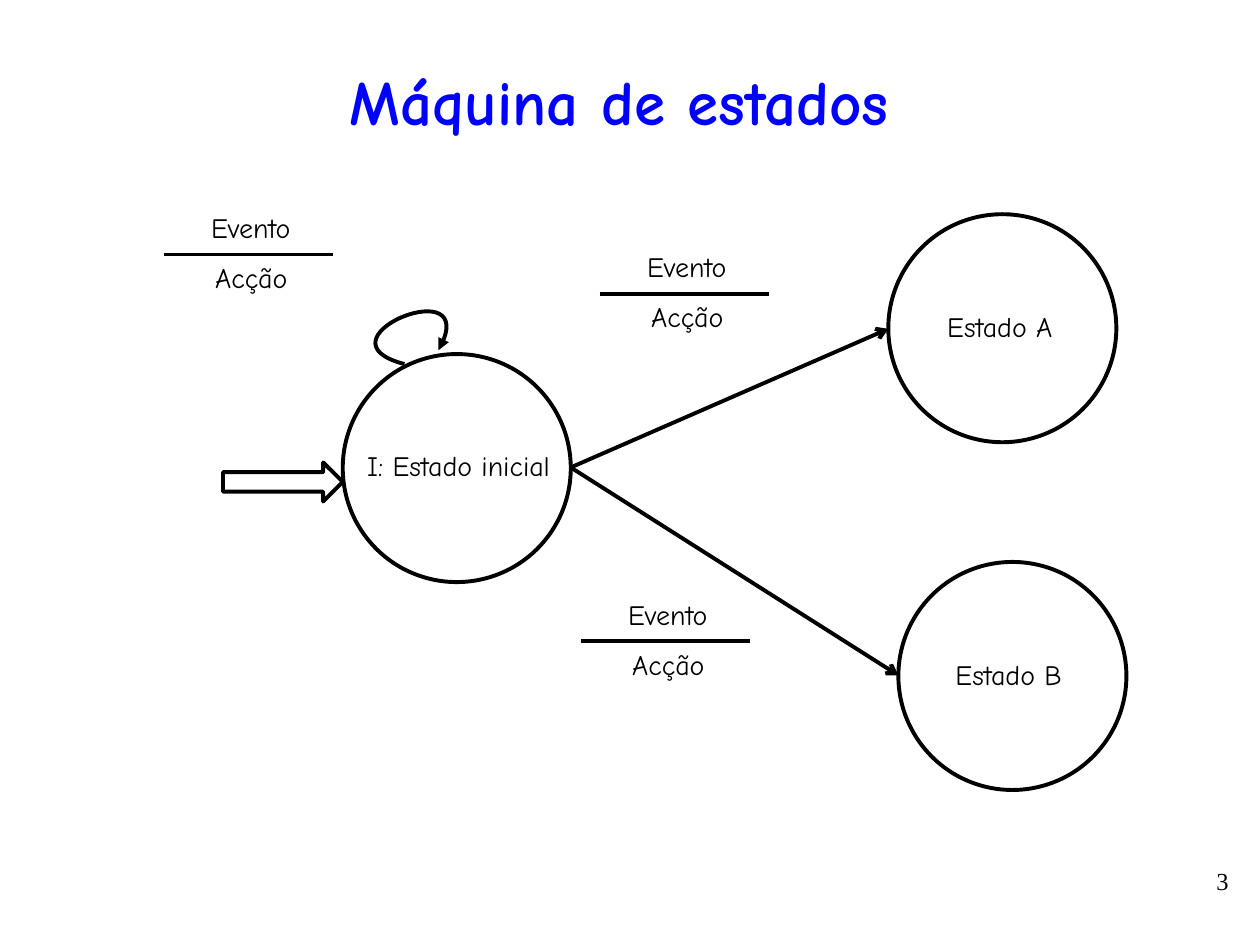
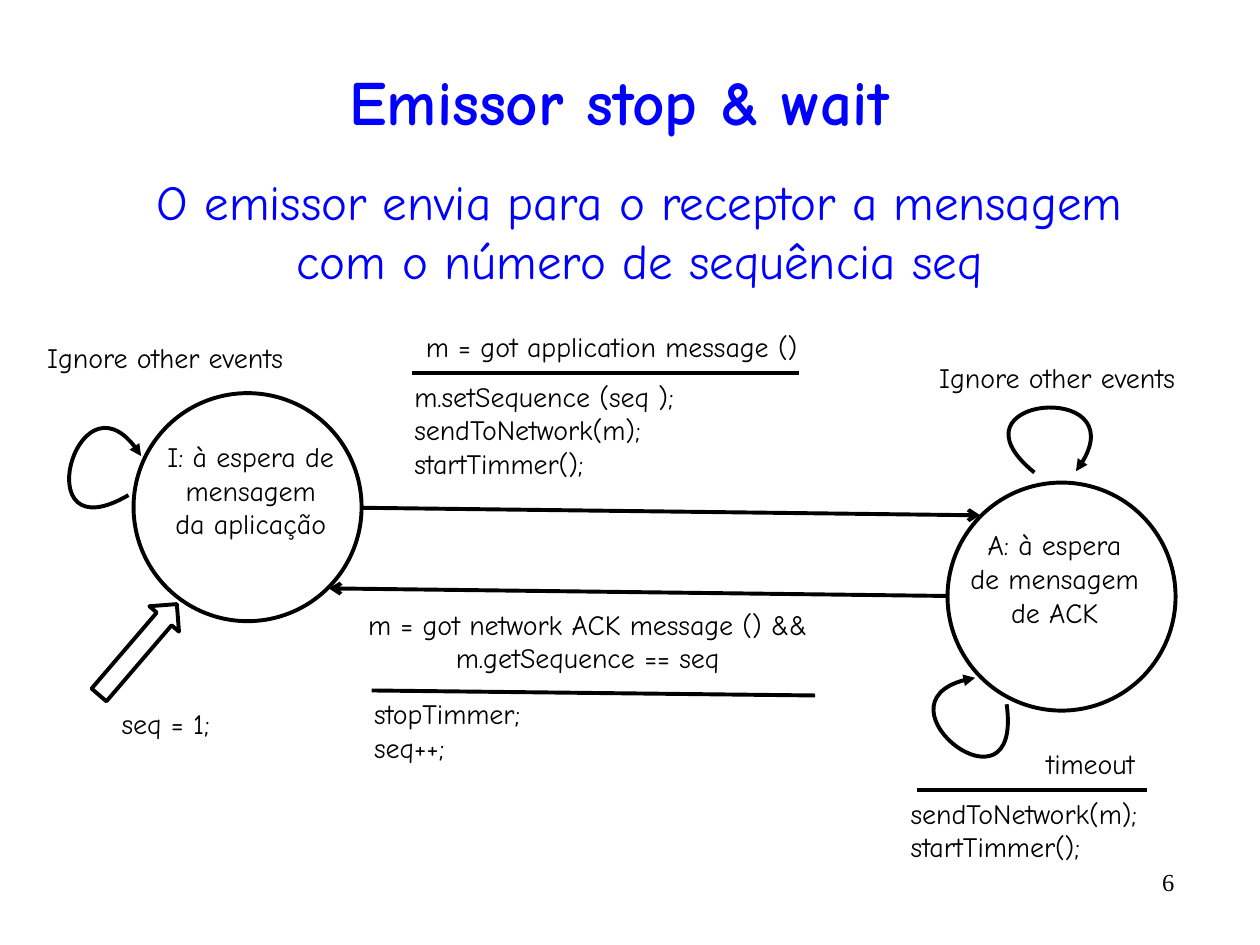
from lxml import etree
from pptx import Presentation
from pptx import util as u
from pptx.dml.color import RGBColor
from pptx.enum import shapes as es, text as et
from pptx.oxml.ns import qn

PX = 9144
COLORS = {"ink": "000000", "heading": "0000FF"}
FONTS = {"main": "Comic Neue", "number": "Times New Roman"}
LABEL = {"size": u.Pt(16), "name": FONTS["main"], "bold": False}
TITLE = {"size": u.Pt(36), "name": FONTS["main"], "bold": True}
SUBTITLE = {"size": u.Pt(28), "name": FONTS["main"], "bold": False}
NUMBER = {"size": u.Pt(14), "name": FONTS["number"], "bold": False}
LEFT, CENTER, RIGHT = et.PP_ALIGN.LEFT, et.PP_ALIGN.CENTER, et.PP_ALIGN.RIGHT
STATE_SIZE = 181


def emu(*lengths):
    return [u.Emu(v * PX) for v in lengths]


def write(tf, content, style, color="ink", align=CENTER):
    tf.text = content
    for p in tf.paragraphs:
        p.alignment = align
        for r in p.runs:
            for key, value in style.items():
                setattr(r.font, key, value)
            r.font.color.rgb = RGBColor.from_string(COLORS[color])


def label(shapes, box, content, align=CENTER, wrap=False, style=LABEL, color="ink"):
    tf = shapes.add_textbox(*emu(*box)).text_frame
    write(tf, content, style, color, align)
    tf.word_wrap = wrap
    tf.auto_size = et.MSO_AUTO_SIZE.SHAPE_TO_FIT_TEXT


def outline(sp, tail=None):
    sp.line.color.rgb = RGBColor.from_string(COLORS["ink"])
    sp.line.width = u.Pt(2.25)
    if tail:
        etree.SubElement(sp.line._get_or_add_ln(), qn("a:tailEnd"), type=tail)


def line(shapes, start, end, tail=None):
    cxn = shapes.add_connector(es.MSO_CONNECTOR.STRAIGHT, *emu(*start, *end))
    outline(cxn, tail)
    etree.SubElement(cxn._element.spPr, qn("a:effectLst"))


def preset(shapes, kind, box, rotation=0):
    sp = shapes.add_shape(kind, *emu(*box))
    sp.rotation = rotation
    sp.shadow.inherit = False
    sp.fill.background()
    outline(sp)


def state(shapes, x, y):
    preset(shapes, es.MSO_SHAPE.OVAL, (x, y, STATE_SIZE, STATE_SIZE))


def entry_arrow(shapes, x, y, rotation=0):
    preset(shapes, es.MSO_SHAPE.RIGHT_ARROW, (x, y, 95, 31), rotation)


def loop(shapes, start, *curve):
    builder = shapes.build_freeform(*start, scale=PX)
    builder.add_line_segments(curve, close=False)
    sp = builder.convert_to_shape()
    segments = list(sp._element.iter(qn("a:lnTo")))
    bezier = etree.Element(qn("a:cubicBezTo"))
    segments[0].addprevious(bezier)
    for segment in segments:
        bezier.append(segment[0])
        segment.getparent().remove(segment)
    sp.shadow.inherit = False
    sp.fill.background()
    outline(sp, "triangle")


def event_over_action(slide, x, y):
    group = slide.shapes.add_group_shape().shapes
    line(group, (x, y), (x + 134, y))
    label(group, (x + 23, y - 40, 92, 37), "Evento")
    label(group, (x + 28, y, 83, 37), "Acção")


def base_slide(prs, title, number, number_box):
    s = prs.slides.add_slide(prs.slide_layouts[5])
    sp = s.shapes.title
    sp.left, sp.top, sp.width, sp.height = emu(33, 42, 917, 75)
    write(sp.text_frame, title, TITLE, "heading")
    sp.text_frame.vertical_anchor = et.MSO_ANCHOR.MIDDLE
    label(s.shapes, number_box, number, RIGHT, True, NUMBER)
    return s


def state_machine(prs):
    s = base_slide(prs, "Máquina de estados", "3", (752, 682, 233, 52))
    states = [
        ((272, 281), (272, 351, 184, 37), "I: Estado inicial"),
        ((705, 170), (736, 241, 115, 37), "Estado A"),
        ((713, 446), (744, 517, 113, 37), "Estado B"),
    ]
    for corner, box, name in states:
        state(s.shapes, *corner)
        label(s.shapes, box, name)
    for end in ((705, 261), (713, 536)):
        line(s.shapes, (453, 371), end, "arrow")
    for corner in ((461, 509), (476, 233), (130, 202)):
        event_over_action(s, *corner)
    entry_arrow(s.shapes, 177, 367)
    loop(s.shapes, (321, 289), (248, 270), (385, 212), (348, 278))


def waiting_for_application(shapes):
    state(shapes, 106, 312)
    label(shapes, (122, 344, 154, 118), "I: à espera de\vmensagem\vda aplicação", wrap=True)
    label(shapes, (12, 265, 238, 37), "Ignore other events")
    loop(shapes, (102, 393), (20, 441), (63, 283), (112, 362))
    entry_arrow(shapes, 62, 500, 310.6)
    label(shapes, (83, 556, 97, 37), "seq = 1;")


def waiting_for_ack(shapes):
    state(shapes, 752, 383)
    label(shapes, (760, 414, 154, 118), "A: à espera\vde mensagem\vde ACK", wrap=True)
    label(shapes, (720, 281, 238, 37), "Ignore other events")
    loop(shapes, (821, 375), (747, 315), (910, 300), (854, 374))
    loop(shapes, (799, 559), (812, 654), (682, 553), (774, 538))
    label(shapes, (815, 588, 101, 37), "timeout")
    line(shapes, (728, 627), (910, 627))
    label(shapes, (713, 627, 227, 64), "sendToNetwork(m);\nstartTimmer();", LEFT)


def message_transition(slide):
    line(slide.shapes, (287, 403), (778, 409), "arrow")
    group = slide.shapes.add_group_shape().shapes
    label(group, (319, 296, 323, 91),
          "m.setSequence (seq );\nsendToNetwork(m);\nstartTimmer();", LEFT, True)
    line(group, (327, 296), (634, 296))
    label(group, (319, 257, 333, 37), "m = got application message ()")


def ack_transition(shapes):
    line(shapes, (752, 473), (261, 467), "arrow")
    line(shapes, (295, 548), (647, 552))
    label(shapes, (270, 477, 393, 64),
          "m = got network ACK message () &&\nm.getSequence == seq")
    label(shapes, (287, 548, 331, 64), "stopTimmer;\nseq++;", LEFT, True)


def stop_and_wait(prs):
    s = base_slide(prs, "Emissor stop & wait", "6", (842, 683, 100, 42))
    label(s.shapes, (90, 131, 835, 104),
          "O emissor envia para o receptor a mensagem com o número de sequência seq",
          CENTER, True, SUBTITLE, "heading")
    waiting_for_application(s.shapes)
    waiting_for_ack(s.shapes)
    message_transition(s)
    ack_transition(s.shapes)


def main():
    prs = Presentation()
    prs.slide_width, prs.slide_height = emu(1000, 750)
    state_machine(prs)
    stop_and_wait(prs)
    prs.save("out.pptx")


if __name__ == "__main__":
    main()
